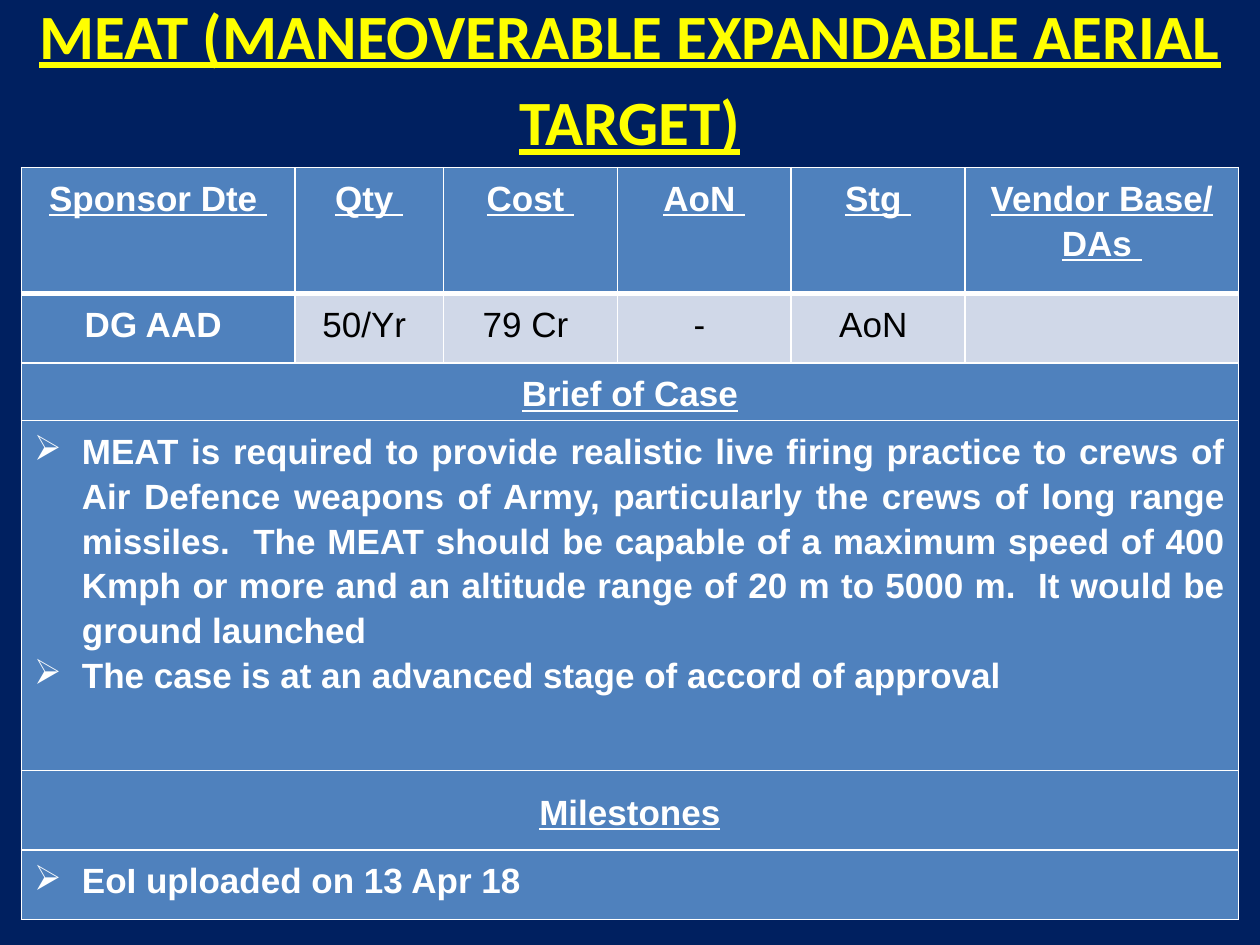
from lxml import etree
from pptx import Presentation
from pptx.dml.color import RGBColor
from pptx.enum import text
from pptx.oxml import ns
from pptx.util import Inches, Pt

COLORS = {
    "navy": "002060",
    "blue": "4F81BD",
    "pale": "D0D8E8",
    "white": "FFFFFF",
    "black": "000000",
    "yellow": "FFFF00",
}
ALIGN = text.PP_ALIGN


def rgb(name):
    return RGBColor.from_string(COLORS[name])


def add_element(parent, tag, **attributes):
    return etree.SubElement(parent, ns.qn(tag), **attributes)


class CaseSlide:
    body_font = "Arial"
    body_size = 20
    line_spacing = 1.15
    indent = 0.38

    def __init__(self, deck):
        self.slide = deck.slides.add_slide(deck.slide_layouts[6])
        background = self.slide.background.fill
        background.solid()
        background.fore_color.rgb = rgb("navy")

    def set_lines(self, frame, lines, color="white", bold=True, underline=False,
                  align=ALIGN.CENTER, font=body_font, size=body_size, bullet=None):
        for index, line in enumerate(lines):
            paragraph = frame.paragraphs[0] if index == 0 else frame.add_paragraph()
            paragraph.text = line
            paragraph.alignment = align
            paragraph.line_spacing = self.line_spacing
            paragraph.font.name = font
            paragraph.font.size = Pt(size)
            paragraph.font.bold = bold
            paragraph.font.underline = underline
            paragraph.font.color.rgb = rgb(color)
            if bullet:
                self.add_bullet(paragraph, bullet)

    def add_bullet(self, paragraph, mark):
        properties = paragraph._p.get_or_add_pPr()
        properties.set("marL", str(Inches(self.indent)))
        properties.set("indent", str(-Inches(self.indent)))
        bullet = etree.Element(ns.qn("a:buChar"), char=mark)
        properties.find(ns.qn("a:defRPr")).addprevious(bullet)

    def title(self, wording, left, top, width, height):
        box = self.slide.shapes.add_textbox(
            Inches(left), Inches(top), Inches(width), Inches(height))
        box.text_frame.word_wrap = True
        self.set_lines(box.text_frame, [wording], color="yellow", underline=True,
                       font="Calibri", size=36)

    def table(self, left, top, widths, heights):
        grid = self.slide.shapes.add_table(
            len(heights), len(widths), Inches(left), Inches(top),
            Inches(sum(widths)), Inches(sum(heights))).table
        for column, width in zip(grid.columns, widths):
            column.width = Inches(width)
        for row, height in zip(grid.rows, heights):
            row.height = Inches(height)
        return grid

    def cell(self, cell, lines, fill="blue", middle=False, **style):
        cell.fill.solid()
        cell.fill.fore_color.rgb = rgb(fill)
        if middle:
            cell.vertical_anchor = text.MSO_ANCHOR.MIDDLE
        self.set_lines(cell.text_frame, lines, **style)

    def borders(self, cell, top=1, bottom=1):
        properties = cell._tc.get_or_add_tcPr()
        sides = {"a:lnL": 1, "a:lnR": 1, "a:lnT": top, "a:lnB": bottom}
        for index, (side, points) in enumerate(sides.items()):
            line = etree.Element(ns.qn(side), w=str(Pt(points)))
            fill = add_element(line, "a:solidFill")
            add_element(fill, "a:srgbClr", val=COLORS["white"])
            properties.insert(index, line)


def main():
    deck = Presentation()
    deck.slide_width, deck.slide_height = Inches(10), Inches(7.5)
    page = CaseSlide(deck)

    headings = [["Sponsor Dte "], ["Qty "], ["Cost "], ["AoN "], ["Stg "],
                ["Vendor Base/", "DAs "]]
    facts = ["DG AAD ", "50/Yr ", "79 Cr ", "- ", "AoN ", ""]
    brief = [
        "MEAT is required to provide realistic live firing practice to crews of "
        "Air Defence weapons of Army, particularly the crews of long range "
        "missiles.  The MEAT should be capable of a maximum speed of 400 Kmph or "
        "more and an altitude range of 20 m to 5000 m.  It would be ground launched",
        "The case is at an advanced stage of accord of approval ",
    ]
    milestones = ["EoI uploaded on 13 Apr 18 "]
    section_style = dict(middle=True, underline=True)
    list_style = dict(align=ALIGN.JUSTIFY, bullet="➢")
    sections = [
        (["Brief of Case"], section_style),
        (brief, list_style),
        (["Milestones"], section_style),
        (milestones, list_style),
    ]

    case = page.table(0.17, 1.33, [2.17, 1.18, 1.38, 1.38, 1.38, 2.17],
                      [1, 0.55, 0.37, 2.78, 0.63, 0.55])
    for column, (heading, fact) in enumerate(zip(headings, facts)):
        page.cell(case.cell(0, column), heading, underline=True)
        fact_style = dict(fill="pale", color="black", bold=False) if column else {}
        page.cell(case.cell(1, column), [fact], **fact_style)
    for row, (lines, style) in enumerate(sections, start=2):
        case.cell(row, 0).merge(case.cell(row, len(headings) - 1))
        page.cell(case.cell(row, 0), lines, **style)
    for row in range(len(case.rows)):
        for column in range(len(headings)):
            page.borders(case.cell(row, column), top=3 if row == 1 else 1,
                         bottom=3 if row == 0 else 1)

    page.title("MEAT (MANEOVERABLE EXPANDABLE AERIAL TARGET)", 0, -0.17, 10, 1.49)
    deck.save("out.pptx")


if __name__ == "__main__":
    main()
